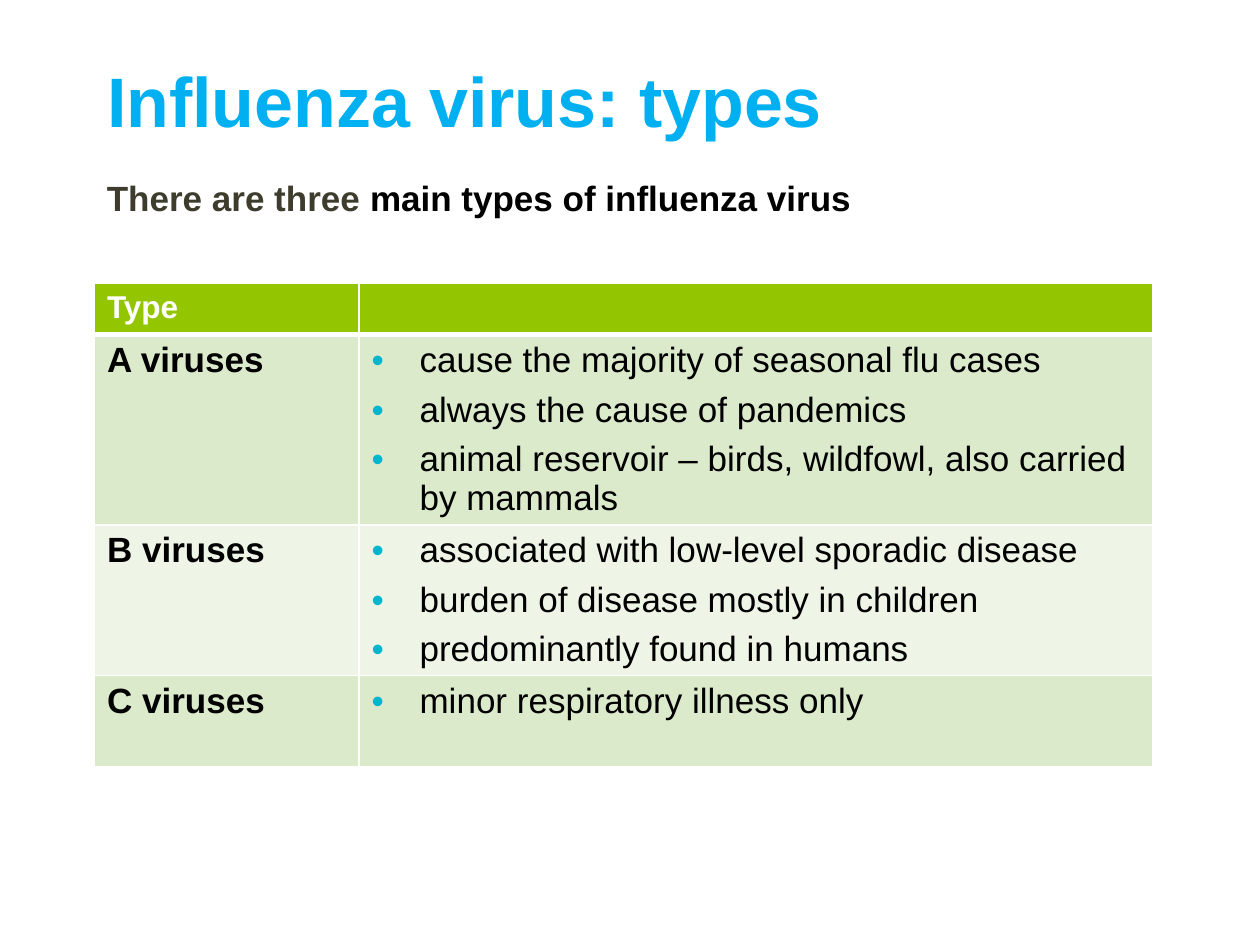
from lxml.etree import SubElement
from pptx import Presentation
from pptx.dml.color import RGBColor
from pptx.enum.text import MSO_ANCHOR as Anchor, MSO_AUTO_SIZE as AutoSize, PP_ALIGN as Align
from pptx.oxml.ns import qn
from pptx.util import Inches, Pt

W, H = Inches(10), Inches(7.5)
WHITE, BLACK, GREEN = "FFFFFF", "000000", "94C600"
BANDS = ["DCEACC", "EEF5E7"]
COLUMN_SHARES = [0.25, 0.75]
HEADER_HEIGHT = 0.37
VIRUSES = [
    ("A viruses", 1.51, [
        "cause the majority of seasonal flu cases",
        "always the cause of pandemics",
        "animal reservoir – birds, wildfowl, also carried by mammals",
    ]),
    ("B viruses", 1.19, [
        "associated with low-level sporadic disease",
        "burden of disease mostly in children",
        "predominantly found in humans",
    ]),
    ("C viruses", 0.72, ["minor respiratory illness only"]),
]


def rgb(value):
    """Turn a hex string into a colour."""
    return RGBColor.from_string(value)


def box(left, top, width, height):
    """Turn shares of the slide into a box of lengths."""
    return int(left * W), int(top * H), int(width * W), int(height * H)


def add_text(p, text, size=20, color=BLACK, bold=False):
    """Add a formatted run to a paragraph."""
    r = p.add_run()
    r.text = text
    r.font.name = "Arial"
    r.font.size = Pt(size)
    r.font.bold = bold
    r.font.color.rgb = rgb(color)


def add_bullet(p, color="00B5CC"):
    """Give a paragraph a coloured bullet with a hanging indent."""
    pPr = p._p.get_or_add_pPr()
    pPr.set("marL", str(Inches(0.38)))
    pPr.set("indent", str(-Inches(0.38)))
    SubElement(SubElement(pPr, qn("a:buClr")), qn("a:srgbClr"), val=color)
    SubElement(pPr, qn("a:buFont"), typeface="Arial")
    SubElement(pPr, qn("a:buChar"), char="•")


def style_cell(cell, fill, top=1, bottom=1):
    """Draw white borders round a cell and fill it."""
    tcPr = cell._tc.get_or_add_tcPr()
    for side, width in (("L", 1), ("R", 1), ("T", top), ("B", bottom)):
        ln = SubElement(tcPr, qn(f"a:ln{side}"), w=str(Pt(width)))
        SubElement(SubElement(ln, qn("a:solidFill")), qn("a:srgbClr"), val=WHITE)
    cell.fill.solid()
    cell.fill.fore_color.rgb = rgb(fill)


def place_title(s, area):
    """Place and format the title."""
    sp = s.shapes.title
    sp.left, sp.top, sp.width, sp.height = area
    tf = sp.text_frame
    tf.word_wrap = False
    tf.auto_size = AutoSize.NONE
    tf.vertical_anchor = Anchor.MIDDLE
    tf.paragraphs[0].alignment = Align.LEFT
    add_text(tf.paragraphs[0], "Influenza virus: types", size=40, color="00B0F0", bold=True)


def place_intro(s, area):
    """Place the line that introduces the table."""
    tf = s.shapes.add_textbox(*area).text_frame
    tf.word_wrap = True
    tf.auto_size = AutoSize.SHAPE_TO_FIT_TEXT
    p = tf.paragraphs[0]
    add_text(p, "There are three ", color="3E3D2D", bold=True)
    add_text(p, "main types of influenza virus", bold=True)


def place_table(s, area):
    """Place the table of virus types."""
    table = s.shapes.add_table(len(VIRUSES) + 1, 2, *area).table
    for column, share in zip(table.columns, COLUMN_SHARES):
        column.width = int(share * area[2])
    heights = [HEADER_HEIGHT] + [height for _, height, _ in VIRUSES]
    for row, height in zip(table.rows, heights):
        row.height = Inches(height)
    for cell in table.rows[0].cells:
        style_cell(cell, GREEN, bottom=3)
    add_text(table.cell(0, 0).text_frame.paragraphs[0], "Type", size=18, color=WHITE, bold=True)
    for i, (name, _, facts) in enumerate(VIRUSES, 1):
        for cell in table.rows[i].cells:
            style_cell(cell, BANDS[(i - 1) % 2], top=3 if i == 1 else 1)
        add_text(table.cell(i, 0).text_frame.paragraphs[0], name, bold=True)
        tf = table.cell(i, 1).text_frame
        for j, fact in enumerate(facts):
            p = tf.add_paragraph() if j else tf.paragraphs[0]
            add_bullet(p)
            p.space_after = Pt(6)
            add_text(p, fact)


def main():
    """Build and save the slide."""
    prs = Presentation()
    prs.slide_width, prs.slide_height = W, H
    s = prs.slides.add_slide(prs.slide_layouts[5])
    place_title(s, box(0.075, 0.05, 0.88, 0.11))
    place_table(s, box(0.075, 0.3, 0.84, 0.51))
    place_intro(s, box(0.075, 0.18, 0.63, 0.06))
    prs.save("out.pptx")


if __name__ == "__main__":
    main()
